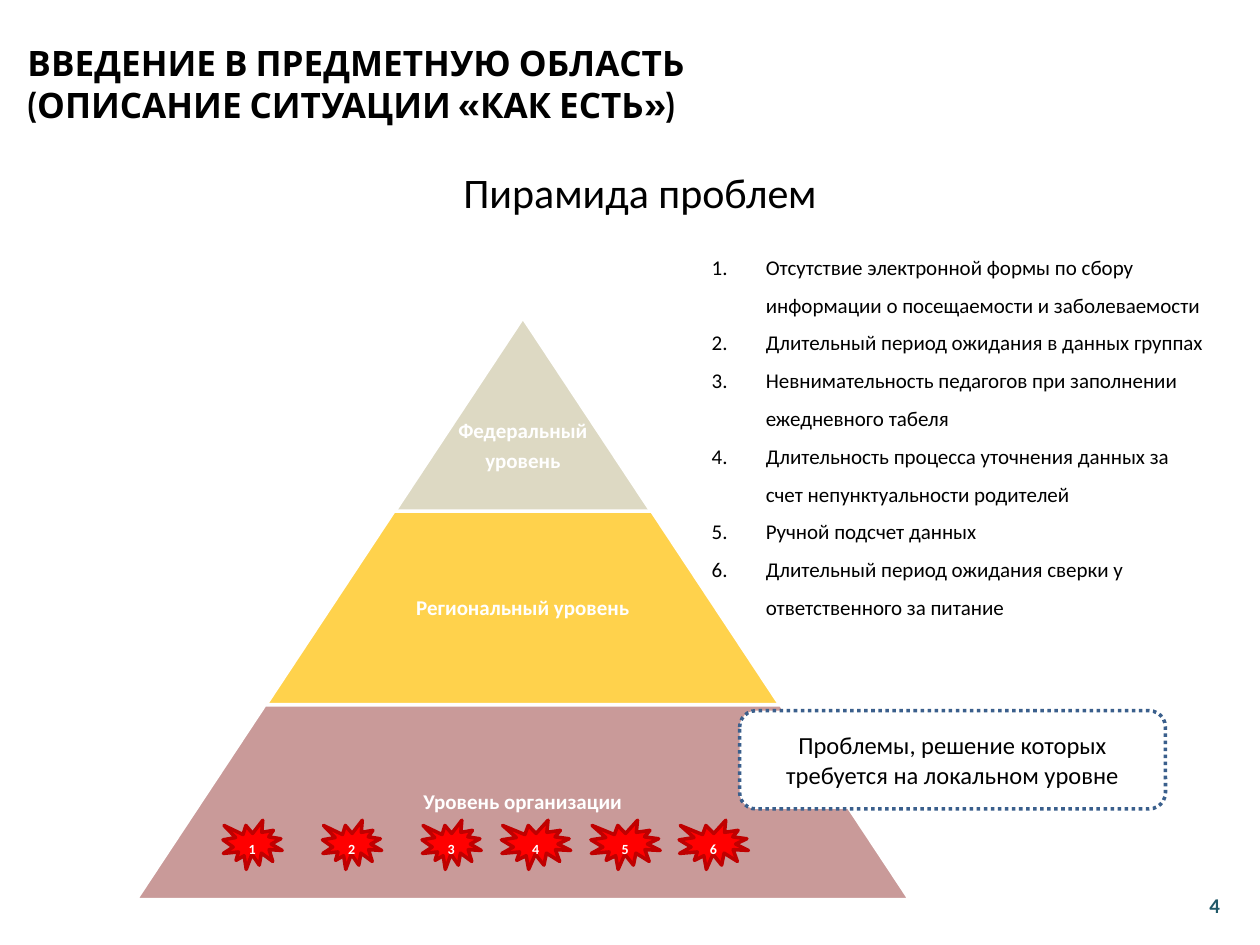
from dataclasses import dataclass

from lxml.etree import SubElement
from pptx import Presentation
from pptx.dml.color import RGBColor
from pptx.enum.dml import MSO_LINE
from pptx.enum.shapes import MSO_SHAPE
from pptx.enum.text import MSO_ANCHOR, PP_ALIGN
from pptx.oxml.ns import qn
from pptx.util import Inches, Pt


@dataclass(frozen=True)
class Theme:
    body_font: str = "Calibri"
    head_font: str = "Cabin"
    black: str = "000000"
    white: str = "FFFFFF"
    number: str = "215968"
    callout_line: str = "3A5F8C"
    seal: str = "FF0000"
    seal_line: str = "C00000"
    subtitle_size: int = 24
    head_size: int = 20
    callout_size: int = 14
    body_size: int = 12
    seal_size: int = 8
    line_width: int = 2


T = Theme()

# Label, fill colour, opacity in percent, offset of the label from the layer top
LAYERS = [
    ("Федеральный\nуровень", "DDD9C3", 100, 0.5),
    ("Региональный уровень", "FFC000", 70, 0),
    ("Уровень организации", "953735", 50, 0),
]
PROBLEMS = [
    "Отсутствие электронной формы по сбору информации о посещаемости и заболеваемости",
    "Длительный период ожидания в данных группах",
    "Невнимательность педагогов при заполнении ежедневного табеля",
    "Длительность процесса уточнения данных за счет непунктуальности родителей",
    "Ручной подсчет данных",
    "Длительный период ожидания сверки у ответственного за питание",
]
# Left edge and width of each numbered seal
SEALS = [(0.68, 0.47), (1.47, 0.47), (2.26, 0.47), (2.89, 0.55), (3.6, 0.55), (4.3, 0.55)]


def set_all(obj, **values):
    for name, value in values.items():
        setattr(obj, name, value)


def write(sp, text, size, color=T.black, font=T.body_font, bold=False,
          align=PP_ALIGN.CENTER, anchor=MSO_ANCHOR.MIDDLE, frame=None, para=None):
    """Fill a shape with one paragraph per line of text."""
    tf = sp.text_frame
    set_all(tf, word_wrap=True, vertical_anchor=anchor, **(frame or {}))
    for i, line in enumerate(text.split("\n")):
        p = tf.add_paragraph() if i else tf.paragraphs[0]
        set_all(p, alignment=align, **(para or {}))
        r = p.add_run()
        r.text = line
        set_all(r.font, name=font, size=Pt(size), bold=bold)
        r.font.color.rgb = RGBColor.from_string(color)
    return tf


def add_text(s, box, text, size, **style):
    return write(s.shapes.add_textbox(*map(Inches, box)), text, size, **style)


def add_shape(s, kind, box, fill, line, opacity=100):
    sp = s.shapes.add_shape(kind, *map(Inches, box))
    sp.shadow.inherit = False
    sp.fill.solid()
    sp.fill.fore_color.rgb = RGBColor.from_string(fill)
    sp.line.color.rgb = RGBColor.from_string(line)
    sp.line.width = Pt(T.line_width)
    if opacity < 100:
        color = sp.fill._xPr.find(qn("a:solidFill"))[0]
        SubElement(color, qn("a:alpha"), val=str(opacity * 1000))
    return sp


def add_header(s, x, y, w):
    add_text(s, (x, y, w, 0.72), "ВВЕДЕНИЕ В ПРЕДМЕТНУЮ ОБЛАСТЬ\n(ОПИСАНИЕ СИТУАЦИИ «КАК ЕСТЬ»)",
             T.head_size, font=T.head_font, bold=True, align=PP_ALIGN.LEFT)
    add_text(s, (x + 0.21, y + 0.87, w, 0.7), "Пирамида проблем", T.subtitle_size)


def add_pyramid(s, x, y, w, h):
    count = len(LAYERS)
    pitch = h / count
    layer_h = pitch + 0.01
    step = w / count
    frame = dict.fromkeys(("margin_left", "margin_right", "margin_top", "margin_bottom"), Inches(0.02))
    para = {"line_spacing": 0.9, "space_after": Pt(4)}
    for i, (label, fill, opacity, drop) in enumerate(LAYERS):
        width = step * (i + 1)
        left, top = x + (w - width) / 2, y + i * pitch
        sp = add_shape(s, MSO_SHAPE.TRAPEZOID, (left, top, width, layer_h), fill, T.white, opacity)
        sp.adjustments[0] = step / 2 / layer_h
        label_w = max(step, width * 0.65)
        add_text(s, (x + (w - label_w) / 2, top + drop, label_w, layer_h - drop), label, T.body_size,
                 color=T.white, bold=True, frame=frame, para=para)


def add_seals(s, x, y):
    for n, (dx, w) in enumerate(SEALS, 1):
        sp = add_shape(s, MSO_SHAPE.EXPLOSION1, (x + dx, y, w, 0.39), T.seal, T.seal_line)
        write(sp, str(n), T.seal_size, color=T.white, bold=True, anchor=MSO_ANCHOR.TOP,
              frame={"margin_left": 0, "margin_right": 0})


def add_callout(s, *box):
    sp = add_shape(s, MSO_SHAPE.ROUNDED_RECTANGLE, box, T.white, T.callout_line)
    sp.line.dash_style = MSO_LINE.ROUND_DOT
    write(sp, "Проблемы, решение которых требуется на локальном уровне", T.callout_size)


def add_problems(s, *box):
    tf = add_text(s, box, "\n".join(PROBLEMS), T.body_size, align=PP_ALIGN.LEFT,
                  anchor=MSO_ANCHOR.TOP, para={"line_spacing": 1.5})
    indent = Inches(0.43)
    for p in tf.paragraphs:
        pPr = p._p.get_or_add_pPr()
        pPr.set("marL", str(indent))
        pPr.set("indent", str(-indent))
        SubElement(pPr, qn("a:buFont"), typeface=T.body_font)
        SubElement(pPr, qn("a:buAutoNum"), type="arabicPeriod")


def main():
    prs = Presentation()
    set_all(prs, slide_width=Inches(10), slide_height=Inches(7.5))
    s = prs.slides.add_slide(prs.slide_layouts[6])
    add_header(s, 0.12, 0.3, 9.5)
    add_pyramid(s, 1.08, 2.52, 6.14, 4.61)
    add_callout(s, 5.87, 5.64, 3.38, 0.78)
    add_seals(s, 1.09, 6.51)
    add_problems(s, 5.55, 1.87, 4.14, 3.13)
    # Slide number
    add_text(s, (9.45, 7.03, 0.38, 0.31), "4", T.body_size, color=T.number, bold=True)
    prs.save("out.pptx")


if __name__ == "__main__":
    main()
